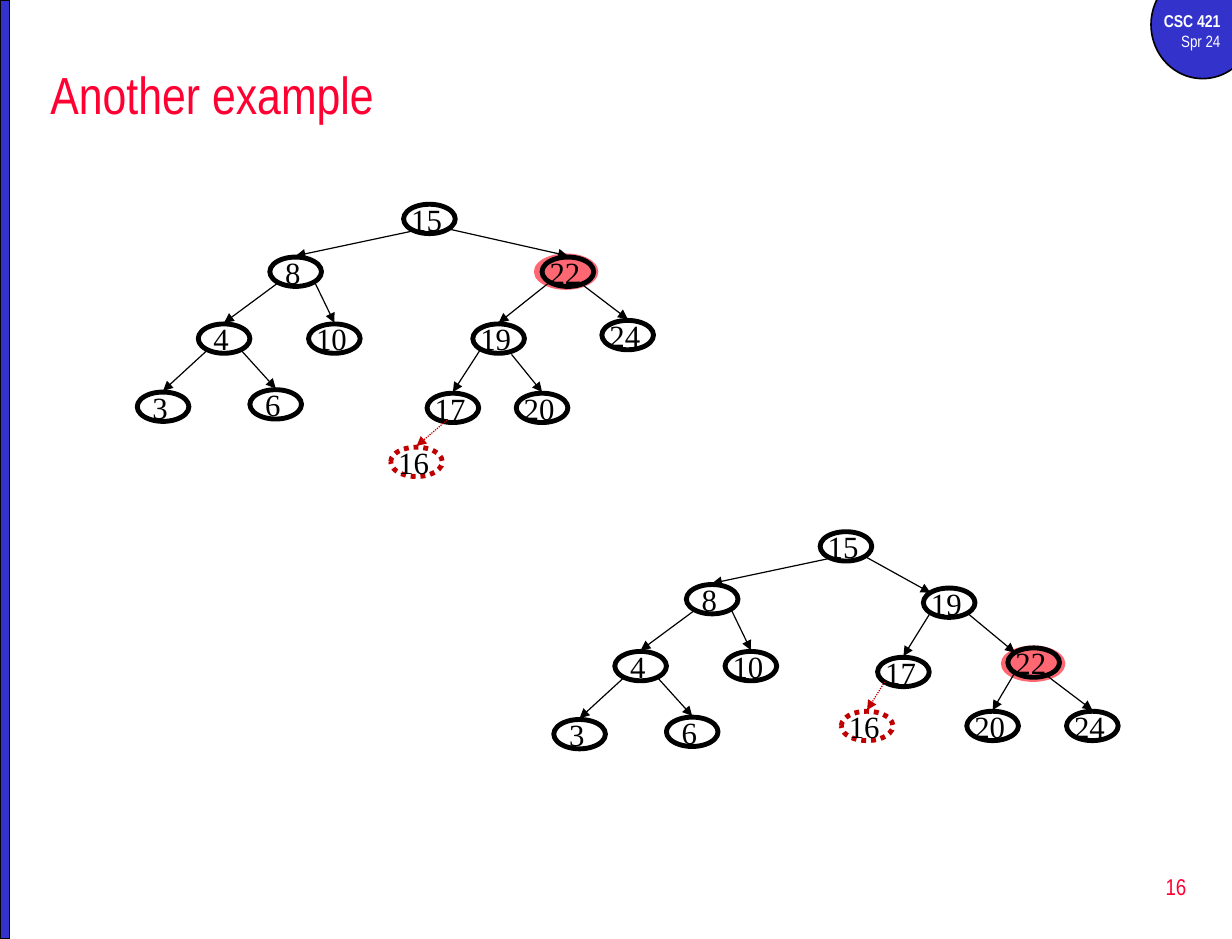
from lxml import etree
from pptx import Presentation
from pptx.dml.color import RGBColor
from pptx.enum.dml import MSO_LINE
from pptx.enum.shapes import MSO_CONNECTOR, MSO_SHAPE
from pptx.enum.text import MSO_ANCHOR, MSO_AUTO_SIZE, PP_ALIGN
from pptx.oxml.ns import qn
from pptx.util import Inches, Pt

OVAL, BAR = MSO_SHAPE.OVAL, MSO_SHAPE.RECTANGLE
STRAIGHT = MSO_CONNECTOR.STRAIGHT
DOTTED = MSO_LINE.ROUND_DOT
LEFT, RIGHT = PP_ALIGN.LEFT, PP_ALIGN.RIGHT
TOP, MIDDLE = MSO_ANCHOR.TOP, MSO_ANCHOR.MIDDLE
NO_FIT = MSO_AUTO_SIZE.NONE

COLORS = {"blue": "3333CC", "red": "FF0033", "pink": "FF6873",
          "dark_red": "C00000", "black": "000000", "white": "FFFFFF"}
SANS, SERIF = "Arial Narrow", "Times New Roman"

TITLE = "Another example"
COURSE = [("CSC 421", 10.5, True), ("Spr 24", 10, False)]
PAGE_NUMBER = "16"

NODE_SIZE = (0.44, 0.25)
HALO_SIZE = (0.55, 0.31)
TOP_CENTER, SHOULDER = (0.22, -0.01), (0.06, 0.04)
NEW_KEY = "16"
REBALANCED_SHIFT = (3.55, 2.79)

LEFT_NODES = {"15": (3.44, 1.74), " 8": (2.3, 2.19), " 4": (1.69, 2.76),
              "10": (2.63, 2.76), " 3": (1.17, 3.34), " 6": (2.13, 3.32)}
LEFT_EDGES = [
    ("15", " 8", (0.07, 0.23), TOP_CENTER),
    (" 8", " 4", (0.07, 0.22), TOP_CENTER),
    (" 8", "10", (0.38, 0.21), TOP_CENTER),
    (" 4", " 3", (0.07, 0.23), TOP_CENTER),
    (" 4", " 6", (0.37, 0.23), TOP_CENTER),
]
TREES = [
    {
        "shift": (0, 0),
        "halo": (4.55, 2.16),
        "nodes": {"22": (4.62, 2.19), "19": (4.03, 2.76), "24": (5.13, 2.73),
                  "17": (3.64, 3.35), "20": (4.4, 3.35), "16": (3.33, 3.81)},
        "edges": [
            ("15", "22", (0.38, 0.21), TOP_CENTER),
            ("22", "19", (0.07, 0.21), TOP_CENTER),
            ("22", "24", (0.31, 0.21), TOP_CENTER),
            ("19", "17", (0.07, 0.21), TOP_CENTER),
            ("19", "20", (0.33, 0.26), TOP_CENTER),
            ("17", "16", (0.17, 0.23), TOP_CENTER),
        ],
    },
    {
        "shift": REBALANCED_SHIFT,
        "halo": (8.53, 5.5),
        "nodes": {"19": (7.87, 5.01), "17": (7.48, 5.6), "22": (8.59, 5.52),
                  "16": (7.17, 6.06), "20": (8.24, 6.06), "24": (9.09, 6.06)},
        "edges": [
            ("15", "19", (0.38, 0.21), SHOULDER),
            ("19", "17", (0.06, 0.21), TOP_CENTER),
            ("19", "22", (0.37, 0.21), SHOULDER),
            ("17", "16", (0.06, 0.21), TOP_CENTER),
            ("22", "20", (0.06, 0.21), TOP_CENTER),
            ("22", "24", (0.31, 0.22), TOP_CENTER),
        ],
    },
]


def rgb(name):
    return RGBColor.from_string(COLORS[name])


def add(point, offset):
    return tuple(a + b for a, b in zip(point, offset))


def set_line(line, color, width, dotted=False):
    line.color.rgb = rgb(color)
    line.width = Pt(width)
    if dotted:
        line.dash_style = DOTTED


def set_frame(frame, anchor, wrap, insets):
    values = {"auto_size": NO_FIT, "word_wrap": wrap, "vertical_anchor": anchor}
    sides = ("margin_left", "margin_top", "margin_right", "margin_bottom")
    values.update(zip(sides, (Inches(inset) for inset in insets)))
    for name, value in values.items():
        setattr(frame, name, value)


def write(para, text, font, size, color, align, bold=False):
    para.alignment = align
    span = para.add_run()
    span.text = text
    for name, value in {"name": font, "size": Pt(size), "bold": bold}.items():
        setattr(span.font, name, value)
    span.font.color.rgb = rgb(color)


def add_solid(shapes, kind, at, size, fill=None, line=None):
    shape = shapes.add_shape(kind, *map(Inches, at + size))
    shape.shadow.inherit = False
    if fill:
        shape.fill.solid()
        shape.fill.fore_color.rgb = rgb(fill)
    else:
        shape.fill.background()
    if line:
        set_line(shape.line, *line)
    else:
        shape.line.fill.background()
    return shape


def add_node(shapes, key, at):
    new = key == NEW_KEY
    line = ("dark_red" if new else "black", 3, new)
    node = add_solid(shapes, OVAL, at, NODE_SIZE, line=line)
    set_frame(node.text_frame, MIDDLE, False, (0, 0, 0, 0))
    write(node.text_frame.paragraphs[0], key, SERIF, 18.9, "black", LEFT)


def add_arrow(shapes, start, end, new):
    arrow = shapes.add_connector(STRAIGHT, *map(Inches, start + end))
    set_line(arrow.line, "dark_red" if new else "black", 0.75, new)
    properties = arrow._element.spPr
    etree.SubElement(properties.find(qn("a:ln")), qn("a:tailEnd"), type="triangle")
    etree.SubElement(properties, qn("a:effectLst"))


def add_tree(page, tree):
    shapes = page.shapes.add_group_shape().shapes
    add_solid(shapes, OVAL, tree["halo"], HALO_SIZE, fill="pink")
    nodes = {key: add(at, tree["shift"]) for key, at in LEFT_NODES.items()}
    nodes.update(tree["nodes"])
    for key, at in nodes.items():
        add_node(shapes, key, at)
    for parent, child, leave, arrive in LEFT_EDGES + tree["edges"]:
        add_arrow(shapes, add(nodes[parent], leave), add(nodes[child], arrive),
                  child == NEW_KEY)


def place_title(page):
    title = page.shapes.title
    bounds = zip(("left", "top", "width", "height"), (0.33, 0.42, 9.92, 0.75))
    for name, value in bounds:
        setattr(title, name, Inches(value))
    set_frame(title.text_frame, MIDDLE, True, (0.1, 0.05, 0.1, 0.05))
    write(title.text_frame.paragraphs[0], TITLE, SANS, 32, "red", LEFT)


def add_right_text(page, at, size, anchor, lines, color):
    box = page.shapes.add_textbox(*map(Inches, at + size))
    frame = box.text_frame
    set_frame(frame, anchor, True, (0.1, 0.05, 0.1, 0.05))
    for index, (text, points, bold) in enumerate(lines):
        para = frame.add_paragraph() if index else frame.paragraphs[0]
        write(para, text, SANS, points, color, RIGHT, bold)


def main():
    deck = Presentation()
    deck.slide_width, deck.slide_height = Inches(10.5), Inches(8)
    page = deck.slides.add_slide(deck.slide_layouts[5])
    outline = ("black", 1)
    add_solid(page.shapes, OVAL, (9.81, -0.25), (0.88, 0.92), "blue", outline)
    add_right_text(page, (9.67, 0.04), (0.83, 0.46), TOP, COURSE, "white")
    add_solid(page.shapes, BAR, (0, 0), (0.08, 8), "blue", outline)
    place_title(page)
    for tree in TREES:
        add_tree(page, tree)
    add_right_text(page, (8.02, 7.29), (2.19, 0.53), MIDDLE,
                   [(PAGE_NUMBER, 14, False)], "red")
    deck.save("out.pptx")


if __name__ == "__main__":
    main()
